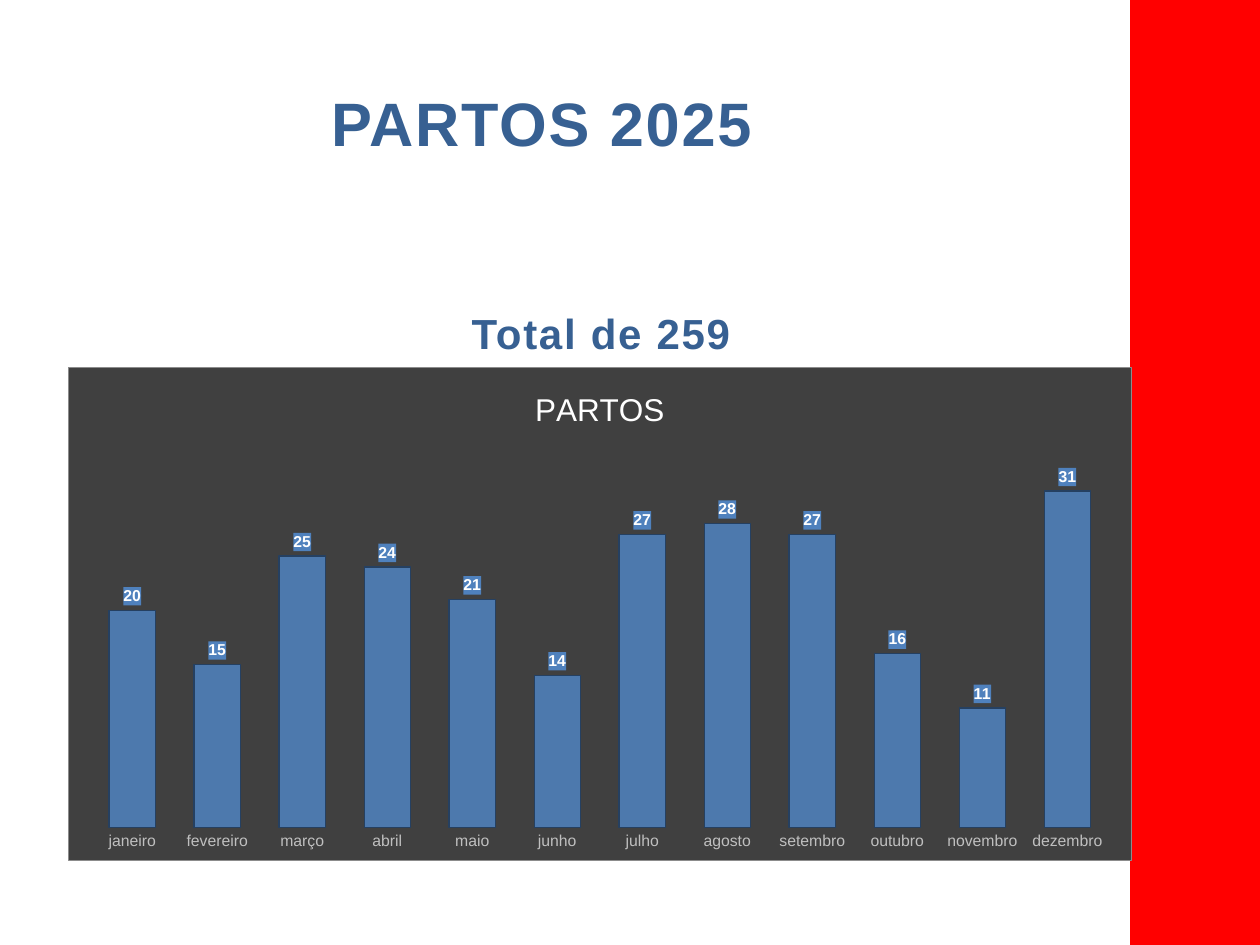
from lxml import etree
from pptx import Presentation
from pptx import util as u
from pptx.chart import data
from pptx.dml import color
from pptx.enum import chart as charts, shapes, text
from pptx.oxml import ns, parse_xml

MONTHS = ["janeiro", "fevereiro", "março", "abril", "maio", "junho",
          "julho", "agosto", "setembro", "outubro", "novembro", "dezembro"]
BIRTHS = [20, 15, 25, 24, 21, 14, 27, 28, 27, 16, 11, 31]


def rgb(value):
    return color.RGBColor.from_string(value)


class Deck:
    face = "Arial"
    navy, red, white, blue = "376092", "FF0000", "FFFFFF", "4F81BD"
    panel, edge, muted, outline = "404040", "8C8C8C", "BFBFBF", "254061"

    def __init__(self):
        self.show = Presentation()
        self.show.slide_width, self.show.slide_height = u.Inches(10), u.Inches(7.5)
        self.slide = self.show.slides.add_slide(self.show.slide_layouts[6])

    def place(self, left, top, width, height):
        across, down = self.show.slide_width, self.show.slide_height
        return [int(share * side) for share, side in
                zip((left, top, width, height), (across, down, across, down))]

    def style(self, font, size, ink, bold=False):
        font.name, font.size, font.bold = self.face, u.Pt(size), bold
        font.color.rgb = rgb(ink)

    def band(self, *area):
        stripe = self.slide.shapes.add_shape(shapes.MSO_SHAPE.RECTANGLE, *self.place(*area))
        stripe.shadow.inherit = False
        stripe.fill.solid()
        stripe.fill.fore_color.rgb = rgb(self.red)
        stripe.line.color.rgb = rgb(self.red)
        stripe.line.width = u.Pt(2)

    def heading(self, title, total, *area):
        frame = self.slide.shapes.add_textbox(*self.place(*area)).text_frame
        frame.word_wrap = True
        for words, size in ((title, 35), (total, 24)):
            line = frame.paragraphs[0] if words == title else frame.add_paragraph()
            run = line.add_run()
            run.text = words
            run.font._element.set("spc", "100")
            self.style(line.font, size, self.navy, True)
        first, last = frame.paragraphs
        first.alignment = text.PP_ALIGN.LEFT
        last.alignment = text.PP_ALIGN.CENTER
        last.space_before = u.Pt(85)

    def paint(self, parent, fill, border=""):
        shade = parse_xml(
            f'<c:spPr {ns.nsdecls("c", "a")}><a:solidFill><a:srgbClr val="{fill}"/>'
            f'</a:solidFill>{border}</c:spPr>')
        parent.find(ns.qn("c:txPr")).addprevious(shade)

    def columns(self, name, categories, values, *area):
        source = data.CategoryChartData()
        source.categories = categories
        source.add_series(name, values)
        chart = self.slide.shapes.add_chart(
            charts.XL_CHART_TYPE.COLUMN_CLUSTERED, *self.place(*area), source).chart
        self.style(chart.font, 10, "000000")
        border = (f'<a:ln w="6350"><a:solidFill><a:srgbClr val="{self.edge}"/>'
                  '</a:solidFill></a:ln>')
        self.paint(chart._chartSpace, self.panel, border)
        chart.has_legend = False
        chart.has_title = True
        chart.chart_title.include_in_layout = False
        caption = chart.chart_title.text_frame
        caption.text = name
        self.style(caption.paragraphs[0].font, 18, self.white)

        months, scale = chart.category_axis, chart.value_axis
        months.major_tick_mark = months.minor_tick_mark = charts.XL_TICK_MARK.NONE
        months.format.line.fill.background()
        self.style(months.tick_labels.font, 9, self.muted)
        scale.visible = scale.has_major_gridlines = False
        scale.minimum_scale, scale.maximum_scale = 0, 35

        plot = chart.plots[0]
        plot.gap_width = 84
        plot.vary_by_categories = False
        bars = plot.series[0]
        bars.format.fill.solid()
        bars.format.fill.fore_color.rgb = rgb(self.blue)
        tint = bars._element.find(".//" + ns.qn("a:srgbClr"))
        etree.SubElement(tint, ns.qn("a:alpha")).set("val", "88000")
        bars.format.line.color.rgb = rgb(self.outline)
        bars.format.line.width = u.Pt(0.75)
        labels = bars.data_labels
        labels.show_value = True
        labels.position = charts.XL_LABEL_POSITION.OUTSIDE_END
        self.style(labels.font, 9, self.white, True)
        self.paint(labels._element, self.blue)


def main():
    deck = Deck()
    deck.band(0.898, 0, 0.102, 1)
    deck.heading("PARTOS 2025", "Total de 259", 0.253, 0.084, 0.448, 0.296)
    deck.columns("PARTOS", MONTHS, BIRTHS, 0.054, 0.388, 0.844, 0.523)
    deck.show.save("out.pptx")


if __name__ == "__main__":
    main()
